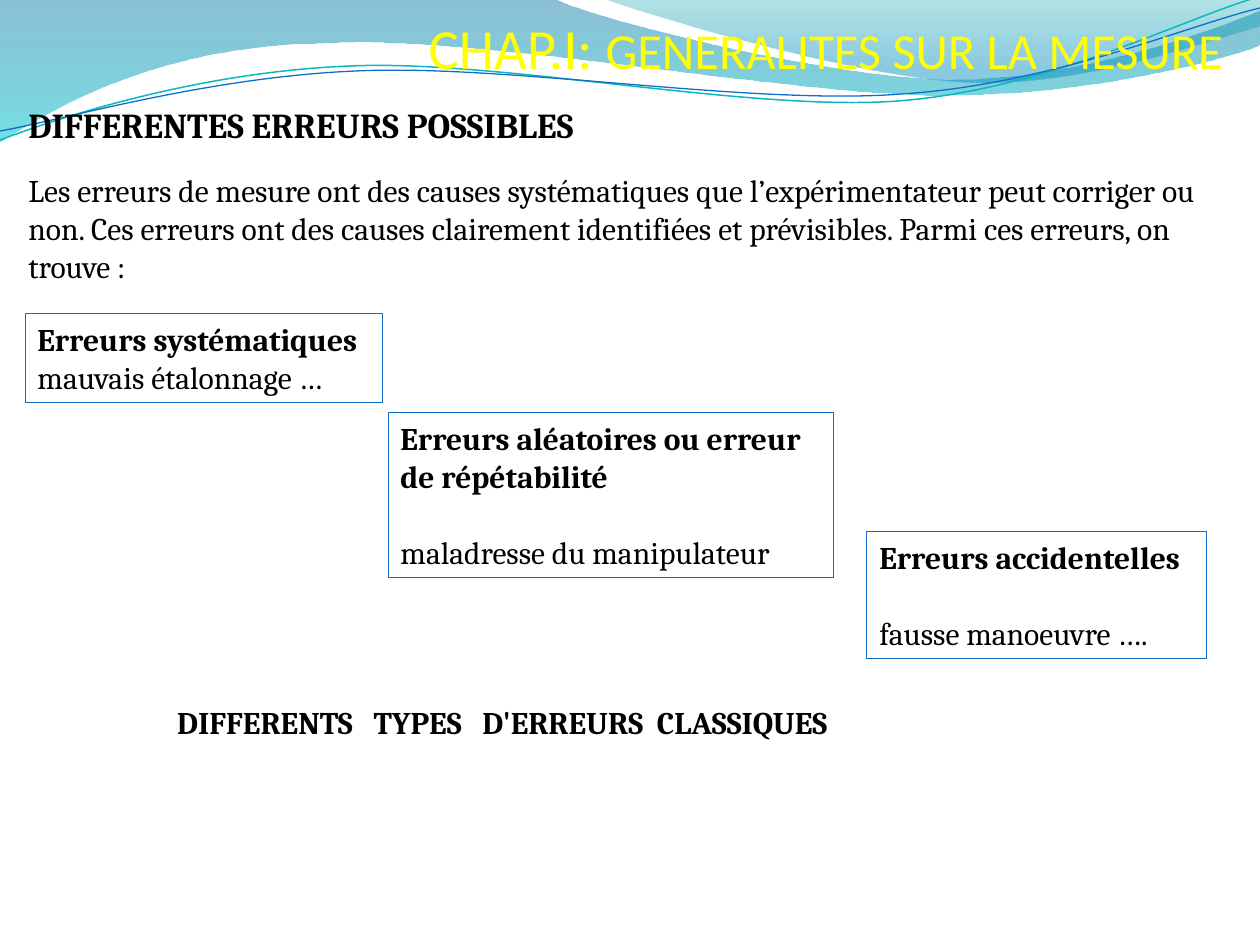
import pptx
import pptx.util
import pptx.dml.color
import pptx.enum.text
import pptx.oxml.ns
import lxml.etree

PX = 914400 / 126  # EMU per px
W, H = 1260, 945
LINE_GAP = 38      # one text line, px
COLORS = {"text": "000000", "title": "FFFF00", "box": "0F6FC6", "wave": "0AB8BF"}

# Content: runs are (text, size), paragraphs are (text, bold, space before)
TITLE = [("CHAP.I: ", 32.4), ("GENERALITES SUR LA MESURE", 28.8)]
TITLE_BOX = (416, 6, 838, 68)
INTRO = ("Les erreurs de mesure ont des causes systématiques que l’expérimentateur "
         "peut corriger ou non. Ces erreurs ont des causes clairement identifiées et "
         "prévisibles. Parmi ces erreurs, on trouve :")
TEXTS = [  # box, size, centred, paragraphs
    ((16, 165, 1221, 127), 18, False, [(INTRO, False, 0)]),
    ((16, 97, 629, 55), 20, False, [("DIFFERENTES ERREURS POSSIBLES", True, 0)]),
    ((66, 697, 873, 50), 18, True,
     [("DIFFERENTS   TYPES   D'ERREURS  CLASSIQUES", True, 0)]),
]
ERROR_BOXES = [  # box, paragraphs
    ((25, 314, 358, 89),
     [("Erreurs systématiques", True, 0), ("mauvais étalonnage …", False, 0)]),
    ((388, 413, 446, 165),
     [("Erreurs aléatoires ou erreur de répétabilité", True, 0),
      ("maladresse du manipulateur", False, LINE_GAP)]),
    ((867, 532, 340, 127),
     [("Erreurs accidentelles", True, 0), ("fausse manoeuvre ….", False, LINE_GAP)]),
]

# Waves: a start point, then lines (x, y) and cubic curves (x1, y1, x2, y2, x, y)
BANDS = [  # path, gradient stops (position, colour, opacity %)
    ([(0, 0), (554, -1), (600, 21, 837, 79, 955, 79), (1075, 79, 1207, 33, 1260, 11),
      (1261, 45), (1239, 55, 1096, 96, 940, 95), (784, 95, 481, 35, 324, 43),
      (163, 45, 58, 105, -1, 142), (0, 0)],
     [(0, "0074A1", 45), (1, "00C6CF", 55)]),
    ([(604, -1), (641, 14, 859, 78, 969, 82), (1079, 87, 1211, 40, 1260, 26),
      (1260, 0), (604, -1)],
     [(0, "00A1A9", 30), (0.8, "008BBF", 45)]),
]
CURVES = [  # path, colour, width
    ([(0, 140), (60, 117, 199, 72, 349, 66), (498, 59, 747, 112, 898, 101),
      (1050, 89, 1182, 19, 1258, -3)], "wave", 0.85),
    ([(0, 131), (59, 121, 207, 77, 357, 71), (508, 64, 752, 106, 903, 94),
      (1053, 84, 1186, 26, 1260, 8)], "box", 0.75),
]


def px(*values):
    return [round(v * PX) for v in values]


def rgb(value):
    return pptx.dml.color.RGBColor.from_string(value)


def qn(tag):
    return pptx.oxml.ns.qn(tag)


def flatten(path, steps=24):
    points = [path[0]]
    for seg in path[1:]:
        if len(seg) == 2:
            points.append(seg)
            continue
        nodes = [points[-1], seg[:2], seg[2:4], seg[4:]]
        for i in range(1, steps + 1):
            t = i / steps
            weights = ((1 - t) ** 3, 3 * t * (1 - t) ** 2, 3 * t * t * (1 - t), t ** 3)
            points.append(tuple(sum(w * n[k] for w, n in zip(weights, nodes))
                                for k in (0, 1)))
    return points


def add_wave(s, path, close):
    # The flattened outline sets the frame; true curves then take its place
    points = [px(*point) for point in flatten(path)]
    builder = s.shapes.build_freeform(*points[0], scale=1.0)
    builder.add_line_segments(points[1:], close=close)
    sp = builder.convert_to_shape()
    sp.shadow.inherit = False
    outline = next(sp.element.spPr.iter(qn("a:path")))
    for child in list(outline):
        outline.remove(child)
    for i, seg in enumerate(path):
        tag = "a:moveTo" if i == 0 else "a:lnTo" if len(seg) == 2 else "a:cubicBezTo"
        step = lxml.etree.SubElement(outline, qn(tag))
        values = px(*seg)
        for x, y in zip(values[::2], values[1::2]):
            lxml.etree.SubElement(step, qn("a:pt"), x=str(x - sp.left), y=str(y - sp.top))
    if close:
        lxml.etree.SubElement(outline, qn("a:close"))
    return sp


def style_run(r, size, font, color, bold=False):
    r.font.size = pptx.util.Pt(size)
    r.font.name = font
    r.font.bold = bold
    r.font.color.rgb = rgb(COLORS[color])


def add_text(s, box, paragraphs, size, centred=False):
    sp = s.shapes.add_textbox(*px(*box))
    tf = sp.text_frame
    tf.word_wrap = True
    tf.auto_size = pptx.enum.text.MSO_AUTO_SIZE.SHAPE_TO_FIT_TEXT
    tf.text = "\n".join(text for text, _, _ in paragraphs)
    align = pptx.enum.text.PP_ALIGN
    for p, (_, bold, gap) in zip(tf.paragraphs, paragraphs):
        p.alignment = align.CENTER if centred else align.LEFT
        if gap:
            p.space_before = pptx.util.Emu(px(gap)[0])
        style_run(p.runs[0], size, "Cambria", "text", bold)
    return sp


def main():
    prs = pptx.Presentation()
    prs.slide_width, prs.slide_height = px(W, H)
    s = prs.slides.add_slide(prs.slide_layouts[5])
    title = s.shapes.title

    # Wave bands and curves
    for path, stops in BANDS:
        sp = add_wave(s, path, True)
        sp.line.fill.background()
        sp.fill.gradient()
        sp.fill.gradient_angle = 270
        for stop, (position, color, _) in zip(sp.fill.gradient_stops, stops):
            stop.position = position
            stop.color.rgb = rgb(color)
        for clr, (_, _, opacity) in zip(sp.element.spPr.iter(qn("a:srgbClr")), stops):
            lxml.etree.SubElement(clr, qn("a:alpha"), val=str(opacity * 1000))
    for path, color, width in CURVES:
        sp = add_wave(s, path, False)
        sp.fill.background()
        sp.line.color.rgb = rgb(COLORS[color])
        sp.line.width = pptx.util.Pt(width)

    # Title, in front of the waves
    s.shapes.element.append(title.element)
    title.left, title.top, title.width, title.height = px(*TITLE_BOX)
    tf = title.text_frame
    tf.auto_size = pptx.enum.text.MSO_AUTO_SIZE.NONE
    tf.vertical_anchor = pptx.enum.text.MSO_ANCHOR.TOP
    p = tf.paragraphs[0]
    p.alignment = pptx.enum.text.PP_ALIGN.LEFT
    for text, size in TITLE:
        r = p.add_run()
        r.text = text
        style_run(r, size, "Calibri", "title")

    # Headings and introduction
    for box, size, centred, paragraphs in TEXTS:
        add_text(s, box, paragraphs, size, centred)

    # Kinds of error, each in a thin frame
    for box, paragraphs in ERROR_BOXES:
        sp = add_text(s, box, paragraphs, 18)
        sp.line.color.rgb = rgb(COLORS["box"])

    prs.save("out.pptx")


if __name__ == "__main__":
    main()
